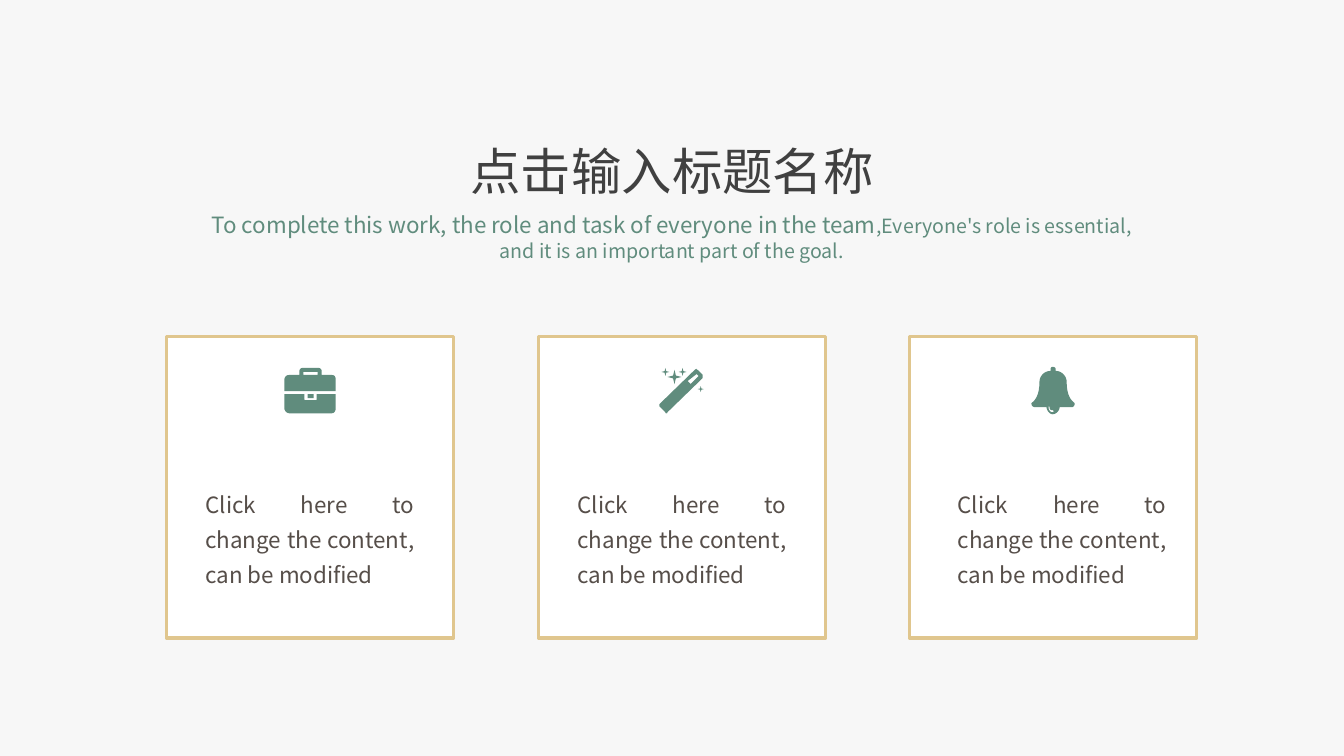
"""Build a title slide section with three icon cards."""
from dataclasses import dataclass
from typing import Any, NamedTuple

import lxml.etree
import pptx
import pptx.dml.color
import pptx.enum.shapes
import pptx.enum.text
import pptx.oxml.ns
import pptx.util

PX = 9144
FONT = "Noto Sans CJK SC"
GREEN, GOLD, WHITE = "608C7D", "E0C68E", "FFFFFF"
ALIGN = pptx.enum.text.PP_ALIGN
CARD_TOP, CARD_WIDTH, CARD_HEIGHT = 334, 285, 299
CAPTION_TOP, CAPTION_WIDTH = 474, 227
CAPTION = "Click here to change the content, can be modified"
CURVE_STEPS = 8

Point = tuple[float, float]
Contour = list[tuple[float, ...]]


class Wording(NamedTuple):
    text: str
    size: int
    color: str


class Box(NamedTuple):
    left: int
    top: int
    width: int
    height: int


@dataclass
class Card:
    left: int
    caption_left: int
    caption_height: int
    icon: list[Contour]


def px(length: float) -> int:
    return round(length * PX)


def rgb(color: str) -> pptx.dml.color.RGBColor:
    return pptx.dml.color.RGBColor.from_string(color)


def apply(target: Any, values: dict[str, Any]) -> None:
    for name, value in values.items():
        setattr(target, name, value)


def add_text(slide: Any, box: Box, wordings: list[Wording], layout: dict[str, Any]) -> None:
    frame = slide.shapes.add_textbox(*map(px, box)).text_frame
    apply(frame, {"word_wrap": True,
                  "auto_size": pptx.enum.text.MSO_AUTO_SIZE.SHAPE_TO_FIT_TEXT})
    paragraph = frame.paragraphs[0]
    apply(paragraph, layout)
    for wording in wordings:
        run = paragraph.add_run()
        run.text = wording.text
        apply(run.font, {"size": pptx.util.Pt(wording.size), "name": FONT})
        run.font.color.rgb = rgb(wording.color)
        east_asian = lxml.etree.SubElement(run.font._element, pptx.oxml.ns.qn("a:ea"))
        east_asian.set("typeface", FONT)


def sparkle(x: int, y: int, radius: int) -> Contour:
    waist = radius / 5
    return [(x + radius, y), (x + waist, y + waist), (x, y + radius),
            (x - waist, y + waist), (x - radius, y), (x - waist, y - waist),
            (x, y - radius), (x + waist, y - waist)]


def flatten(contour: Contour) -> list[Point]:
    """Turn pairs (lines) and sextuples (cubic curves) into points."""
    points: list[Point] = []
    for step in contour:
        if len(step) == 2:
            points.append((step[0], step[1]))
            continue
        controls = [points[-1], step[0:2], step[2:4], step[4:6]]
        for index in range(1, CURVE_STEPS + 1):
            t = index / CURVE_STEPS
            weights = ((1 - t) ** 3, 3 * t * (1 - t) ** 2, 3 * t * t * (1 - t), t ** 3)
            x, y = (sum(w * c[axis] for w, c in zip(weights, controls)) for axis in (0, 1))
            points.append((x, y))
    return points


def add_icon(slide: Any, contours: list[Contour]) -> None:
    outlines = [[(px(x), px(y)) for x, y in flatten(contour)] for contour in contours]
    builder = slide.shapes.build_freeform(*outlines[0][0])
    for index, outline in enumerate(outlines):
        if index:
            builder.move_to(*outline[0])
        builder.add_line_segments(outline[1:], close=True)
    icon = builder.convert_to_shape()
    icon.shadow.inherit = False
    icon.fill.solid()
    icon.fill.fore_color.rgb = rgb(GREEN)
    icon.line.fill.background()


def add_frame(slide: Any, left: int) -> None:
    frame = slide.shapes.add_shape(
        pptx.enum.shapes.MSO_SHAPE.RECTANGLE,
        *map(px, Box(left, CARD_TOP, CARD_WIDTH, CARD_HEIGHT)))
    frame.shadow.inherit = False
    frame.fill.solid()
    frame.fill.fore_color.rgb = rgb(WHITE)
    frame.line.color.rgb = rgb(GOLD)
    frame.line.width = pptx.util.Pt(2.25)


BRIEFCASE: list[Contour] = [
    [(333, 388), (282, 388), (282, 377), (282, 374, 284, 372, 287, 372), (297, 372),
     (297, 368), (297, 366, 299, 365, 300, 365), (316, 365),
     (317, 365, 319, 366, 319, 368), (319, 372), (329, 372),
     (332, 372, 333, 374, 333, 377)],
    [(333, 405), (333, 407, 332, 410, 329, 410), (287, 410),
     (284, 410, 282, 407, 282, 405), (282, 391), (302, 391), (302, 396),
     (302, 397, 302, 397, 303, 397), (313, 397), (314, 397, 314, 397, 314, 396),
     (314, 391), (333, 391)],
    [(315, 372), (315, 369), (301, 369), (301, 372)],
    [(311, 395), (305, 395), (305, 391), (311, 391)],
]
WAND: list[Contour] = [
    [(697, 375), (662, 409), (662, 410, 662, 410, 661, 410),
     (660, 410, 660, 410, 660, 409), (654, 403), (654, 402, 654, 401, 654, 401),
     (689, 367), (689, 367, 690, 366, 691, 366), (691, 366, 691, 367, 692, 367),
     (697, 372), (697, 373), (697, 374, 697, 374, 697, 375)],
    [(693, 373), (691, 371), (682, 378), (685, 381)],
    sparkle(660, 369, 4),
    sparkle(669, 374, 7),
    sparkle(677, 369, 4),
    sparkle(695, 386, 3),
]
BELL: list[Contour] = [
    [(1063, 404), (1051, 404), (1051, 407, 1048, 411, 1044, 411),
     (1041, 411, 1038, 407, 1038, 404), (1027, 404),
     (1024, 404, 1023, 402, 1023, 400), (1027, 397, 1031, 392, 1031, 379),
     (1031, 374, 1035, 368, 1042, 368), (1042, 367, 1042, 367, 1042, 366),
     (1042, 365, 1043, 364, 1044, 364), (1046, 364, 1047, 365, 1047, 366),
     (1047, 367, 1047, 367, 1047, 368), (1054, 368, 1058, 374, 1058, 379),
     (1058, 392, 1062, 397, 1066, 400), (1066, 402, 1065, 404, 1063, 404)],
    [(1044, 407), (1042, 407, 1041, 406, 1041, 404),
     (1041, 404, 1041, 403, 1040, 403), (1040, 403, 1040, 404, 1040, 404),
     (1040, 407, 1042, 409, 1044, 409), (1045, 409, 1045, 408, 1045, 408),
     (1045, 408, 1045, 407, 1044, 407)],
]
CARDS = [
    Card(165, 194, 150, BRIEFCASE),
    Card(534, 563, 150, WAND),
    Card(902, 940, 115, BELL),
]


def main() -> None:
    deck = pptx.Presentation()
    apply(deck, {"slide_width": px(1333), "slide_height": px(750)})
    slide = deck.slides.add_slide(deck.slide_layouts[6])
    slide.background.fill.solid()
    slide.background.fill.fore_color.rgb = rgb("F7F7F7")

    centred = {"alignment": ALIGN.CENTER}
    justified = {"alignment": ALIGN.JUSTIFY, "line_spacing": 1.3}
    add_text(slide, Box(122, 134, 1089, 71),
             [Wording("点击输入标题名称", 36, "404040")], centred)
    add_text(slide, Box(193, 205, 947, 84), [
        Wording("To complete this work, the role and task of everyone in the team", 16, GREEN),
        Wording(",Everyone's role is essential, and it is an important part of the goal.",
                14, GREEN),
    ], centred)
    for card in CARDS:
        add_frame(slide, card.left)
        add_text(slide, Box(card.caption_left, CAPTION_TOP, CAPTION_WIDTH, card.caption_height),
                 [Wording(CAPTION, 16, "564E49")], justified)
        add_icon(slide, card.icon)
    deck.save("out.pptx")


if __name__ == "__main__":
    main()
